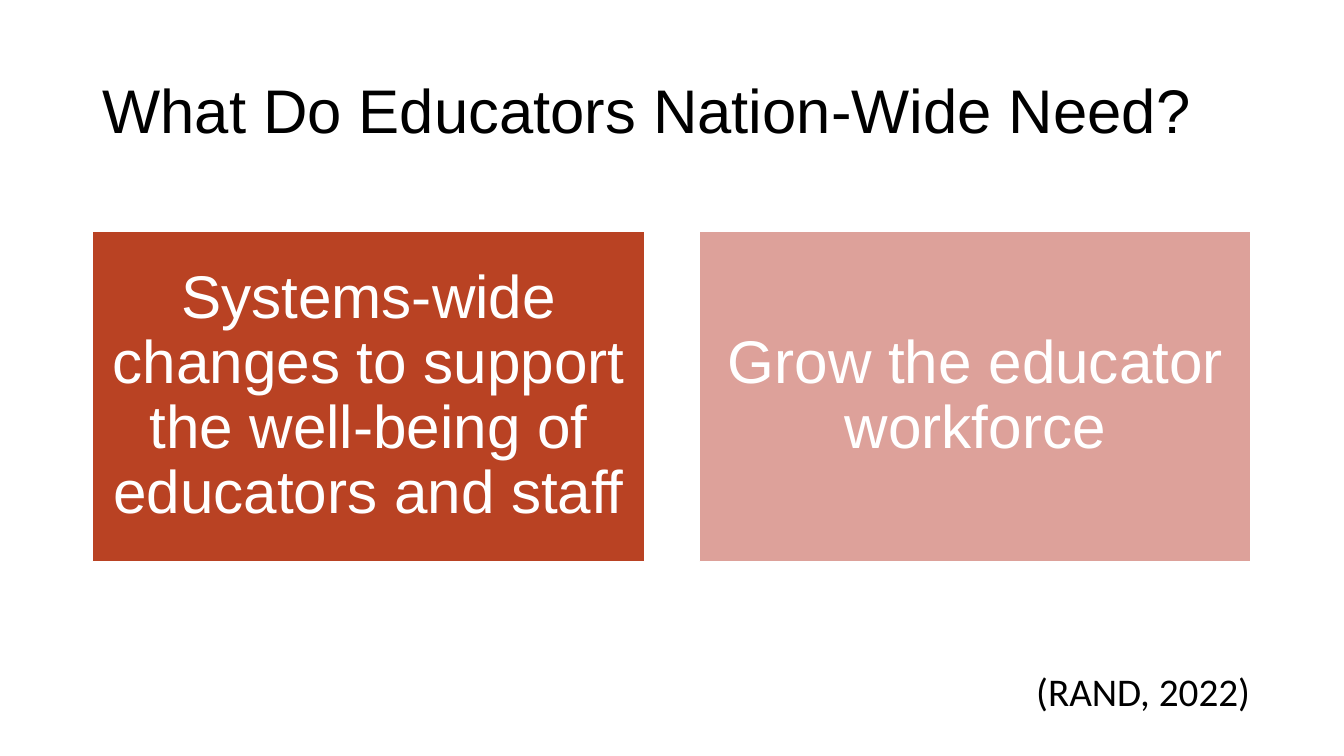
from pptx import Presentation
from pptx.dml.color import RGBColor
from pptx.enum.shapes import MSO_SHAPE
from pptx.enum.text import MSO_ANCHOR, MSO_AUTO_SIZE, PP_ALIGN
from pptx.util import Pt

COLORS = {"black": "000000", "white": "FFFFFF", "rust": "B94223", "rose": "DDA19A"}

NEEDS = [
    ("Systems-wide changes to support the well-being of educators and staff", "rust"),
    ("Grow the educator workforce", "rose"),
]


def color(name):
    return RGBColor.from_string(COLORS[name])


def write(shape, text, size, font="Arial", fill="black", align=PP_ALIGN.LEFT,
          anchor=MSO_ANCHOR.MIDDLE, inset=None):
    frame = shape.text_frame
    frame.word_wrap = True
    frame.auto_size = MSO_AUTO_SIZE.NONE
    frame.vertical_anchor = anchor
    if inset is not None:
        frame.margin_left = frame.margin_right = Pt(inset)
        frame.margin_top = frame.margin_bottom = Pt(inset)
    para = frame.paragraphs[0]
    para.alignment = align
    para.line_spacing = 0.9
    para.space_before = Pt(0)
    span = para.add_run()
    span.text = text
    span.font.name = font
    span.font.size = Pt(size)
    span.font.color.rgb = color(fill)


def add_title(page, left, top, width, height):
    title = page.shapes.title
    title.left, title.top = Pt(left), Pt(top)
    title.width, title.height = Pt(width), Pt(height)
    write(title, "What Do Educators Nation-Wide Need?", 44)


def add_needs(page, left, top, width, height, gap=39.4):
    card_width = (width - gap * (len(NEEDS) - 1)) / len(NEEDS)
    for index, (text, fill) in enumerate(NEEDS):
        card = page.shapes.add_shape(
            MSO_SHAPE.RECTANGLE, Pt(left + index * (card_width + gap)), Pt(top),
            Pt(card_width), Pt(height))
        card.shadow.inherit = False
        card.fill.solid()
        card.fill.fore_color.rgb = color(fill)
        card.line.color.rgb = color("white")
        card.line.width = Pt(1)
        write(card, text, 43, fill="white", align=PP_ALIGN.CENTER, inset=12.9)


def add_citation(page, left, top, width, height):
    box = page.shapes.add_textbox(Pt(left), Pt(top), Pt(width), Pt(height))
    write(box, "(RAND, 2022)", 28, font="Calibri", align=PP_ALIGN.RIGHT,
          anchor=MSO_ANCHOR.TOP)


def main():
    deck = Presentation()
    deck.slide_width, deck.slide_height = Pt(960), Pt(540)
    page = deck.slides.add_slide(deck.slide_layouts[5])
    page.background.fill.solid()
    page.background.fill.fore_color.rgb = color("white")

    # Heading, the two needs side by side, then the source
    add_title(page, 66, 28.8, 828, 104.4)
    add_needs(page, 66.2, 165, 827.4, 236.2)
    add_citation(page, 72, 476.6, 828, 40.3)
    deck.save("out.pptx")


if __name__ == "__main__":
    main()
